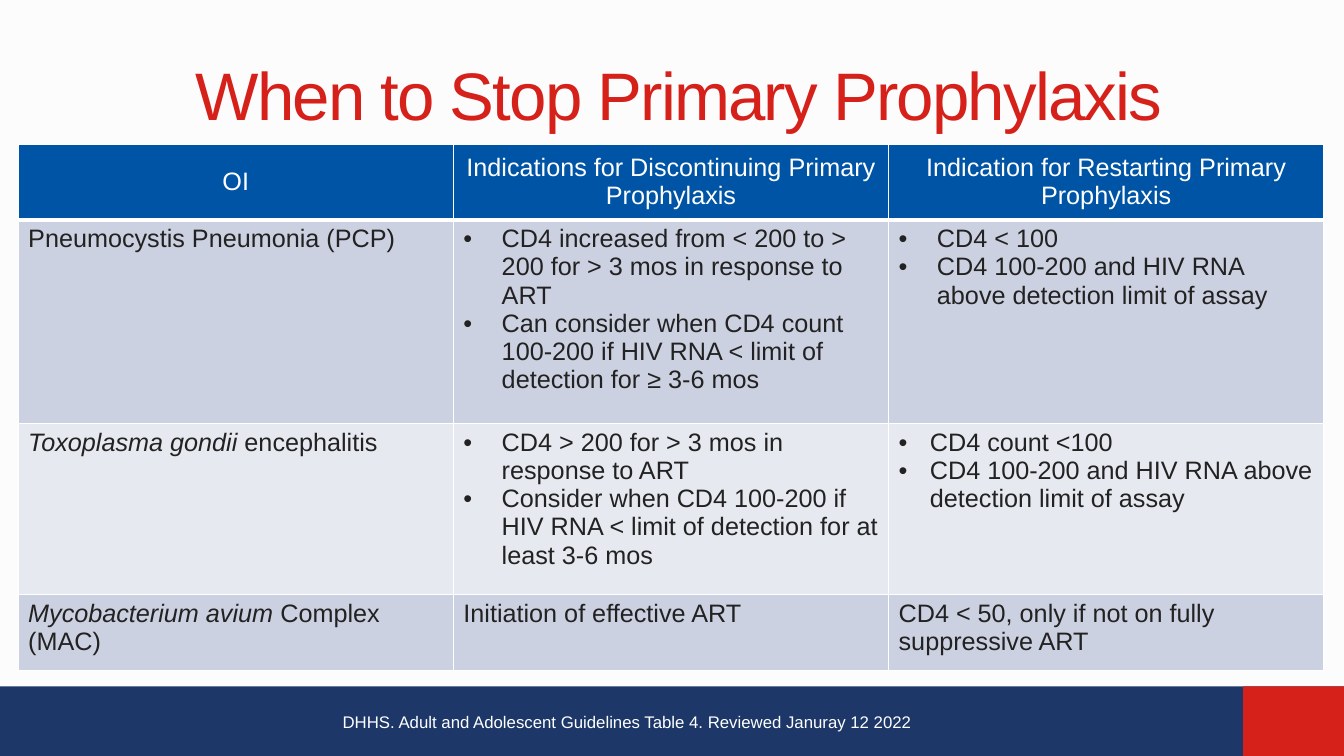
from lxml.etree import SubElement
from pptx import Presentation
from pptx.dml.color import RGBColor
from pptx.enum.shapes import MSO_SHAPE
from pptx.enum.text import MSO_ANCHOR, PP_ALIGN
from pptx.oxml.ns import qn
from pptx.util import Inches, Pt

WHITE = RGBColor(0xFF, 0xFF, 0xFF)
PAPER = RGBColor(0xFC, 0xFC, 0xFC)
NAVY = RGBColor(0x1C, 0x37, 0x68)
RED = RGBColor(0xD6, 0x20, 0x1A)
BLUE = RGBColor(0x00, 0x54, 0xA6)
INK = RGBColor(0x22, 0x22, 0x22)
BANDS = [RGBColor(0xCC, 0xD1, 0xE1), RGBColor(0xE7, 0xE9, 0xF1)]

HEADS = ["OI", "Indications for Discontinuing Primary Prophylaxis",
         "Indication for Restarting Primary Prophylaxis"]
ROWS = [
    (("", "Pneumocystis Pneumonia (PCP)"),
     (0.38, ["CD4 increased from < 200 to > 200 for > 3 mos in response to ART",
             "Can consider when CD4 count 100-200 if HIV RNA < limit of detection for ≥ 3-6 mos"]),
     (0.38, ["CD4 < 100", "CD4 100-200 and HIV RNA above detection limit of assay"])),
    (("Toxoplasma gondii ", "encephalitis"),
     (0.38, ["CD4 > 200 for > 3 mos in response to ART",
             "Consider when CD4 100-200 if HIV RNA < limit of detection for at least 3-6 mos"]),
     (0.31, ["CD4 count <100", "CD4 100-200 and HIV RNA above detection limit of assay"])),
    (("Mycobacterium avium ", "Complex (MAC)"),
     (0, ["Initiation of effective ART"]),
     (0, ["CD4 < 50, only if not on fully suppressive ART"])),
]
HEIGHTS = [0.75, 2.02, 1.7, 0.75]


def add_run(para, text, size, color, italic=False):
    """Append one styled run to a paragraph."""
    run = para.add_run()
    run.text = text
    font = run.font
    font.name, font.size, font.bold, font.italic = "Arial", Pt(size), False, italic
    font.color.rgb = color
    return run


def add_text(slide, box, text, size, color):
    """Place a wrapped text box and return its frame, paragraph and run."""
    frame = slide.shapes.add_textbox(*map(Inches, box)).text_frame
    frame.word_wrap = True
    para = frame.paragraphs[0]
    return frame, para, add_run(para, text, size, color)


def add_title(slide, box):
    """Place the centred, tightly spaced title."""
    frame, para, run = add_text(slide, box, "When to Stop Primary Prophylaxis", 48, RED)
    frame.vertical_anchor = MSO_ANCHOR.MIDDLE
    frame.margin_left = frame.margin_right = Inches(0.13)
    frame.margin_top = frame.margin_bottom = Inches(0.07)
    para.alignment = PP_ALIGN.CENTER
    run.font._element.set("spc", "-130")


def add_footer(slide, left, top, width, height):
    """Draw the navy band with its red end and the citation."""
    for start, span, color in [(left, width, NAVY), (left + width - 1, 1, RED)]:
        bar = slide.shapes.add_shape(MSO_SHAPE.RECTANGLE,
                                     *map(Inches, (start, top, span, height)))
        bar.shadow.inherit = False
        bar.fill.solid()
        bar.fill.fore_color.rgb = color
        bar.line.fill.background()
    add_text(slide, (left + 3.3, top + 0.2, 6.75, 0.4),
             "DHHS. Adult and Adolescent Guidelines Table 4. Reviewed Januray 12 2022", 12, WHITE)


def style_cell(cell, color, base=1):
    """Set a cell's white borders and its fill."""
    props = cell._tc.get_or_add_tcPr()
    for side, width in [("L", 1), ("R", 1), ("T", 1), ("B", base)]:
        line = SubElement(props, qn(f"a:ln{side}"), w=str(Pt(width)))
        SubElement(SubElement(line, qn("a:solidFill")), qn("a:srgbClr"), val=str(WHITE))
    cell.fill.solid()
    cell.fill.fore_color.rgb = color


def fill_points(frame, indent, points):
    """Write one paragraph per point, with bullets when indented."""
    for i, point in enumerate(points):
        para = frame.add_paragraph() if i else frame.paragraphs[0]
        if indent:
            props = para._p.get_or_add_pPr()
            props.set("marL", str(Inches(indent)))
            props.set("indent", str(-Inches(indent)))
            SubElement(props, qn("a:buFont"), typeface="Arial")
            SubElement(props, qn("a:buChar"), char="•")
        add_run(para, point, 18, INK)


def add_grid(slide, left, top, width):
    """Place the table of infections and their indications."""
    box = map(Inches, (left, top, width, sum(HEIGHTS)))
    table = slide.shapes.add_table(len(HEIGHTS), len(HEADS), *box).table
    for col in table.columns:
        col.width = Inches(width / len(HEADS))
    for row, height in zip(table.rows, HEIGHTS):
        row.height = Inches(height)
    for col, head in enumerate(HEADS):
        cell = table.cell(0, col)
        style_cell(cell, BLUE, 3)
        cell.vertical_anchor = MSO_ANCHOR.MIDDLE
        para = cell.text_frame.paragraphs[0]
        para.alignment = PP_ALIGN.CENTER
        add_run(para, head, 18, WHITE)
    for row, (name, *lists) in enumerate(ROWS, 1):
        for col in range(len(HEADS)):
            style_cell(table.cell(row, col), BANDS[(row - 1) % 2])
        species, rest = name
        para = table.cell(row, 0).text_frame.paragraphs[0]
        if species:
            add_run(para, species, 18, INK, True)
        add_run(para, rest, 18, INK)
        for col, (indent, points) in enumerate(lists, 1):
            fill_points(table.cell(row, col).text_frame, indent, points)


def main():
    """Build and save the slide."""
    deck = Presentation()
    deck.slide_width, deck.slide_height = Inches(13.33), Inches(7.5)
    slide = deck.slides.add_slide(deck.slide_layouts[6])
    slide.background.fill.solid()
    slide.background.fill.fore_color.rgb = PAPER
    add_footer(slide, 0, 6.81, 13.33, 0.69)
    add_title(slide, (0.67, 0.3, 12.13, 1.25))
    add_grid(slide, 0.18, 1.43, 12.95)
    deck.save("out.pptx")


if __name__ == "__main__":
    main()
